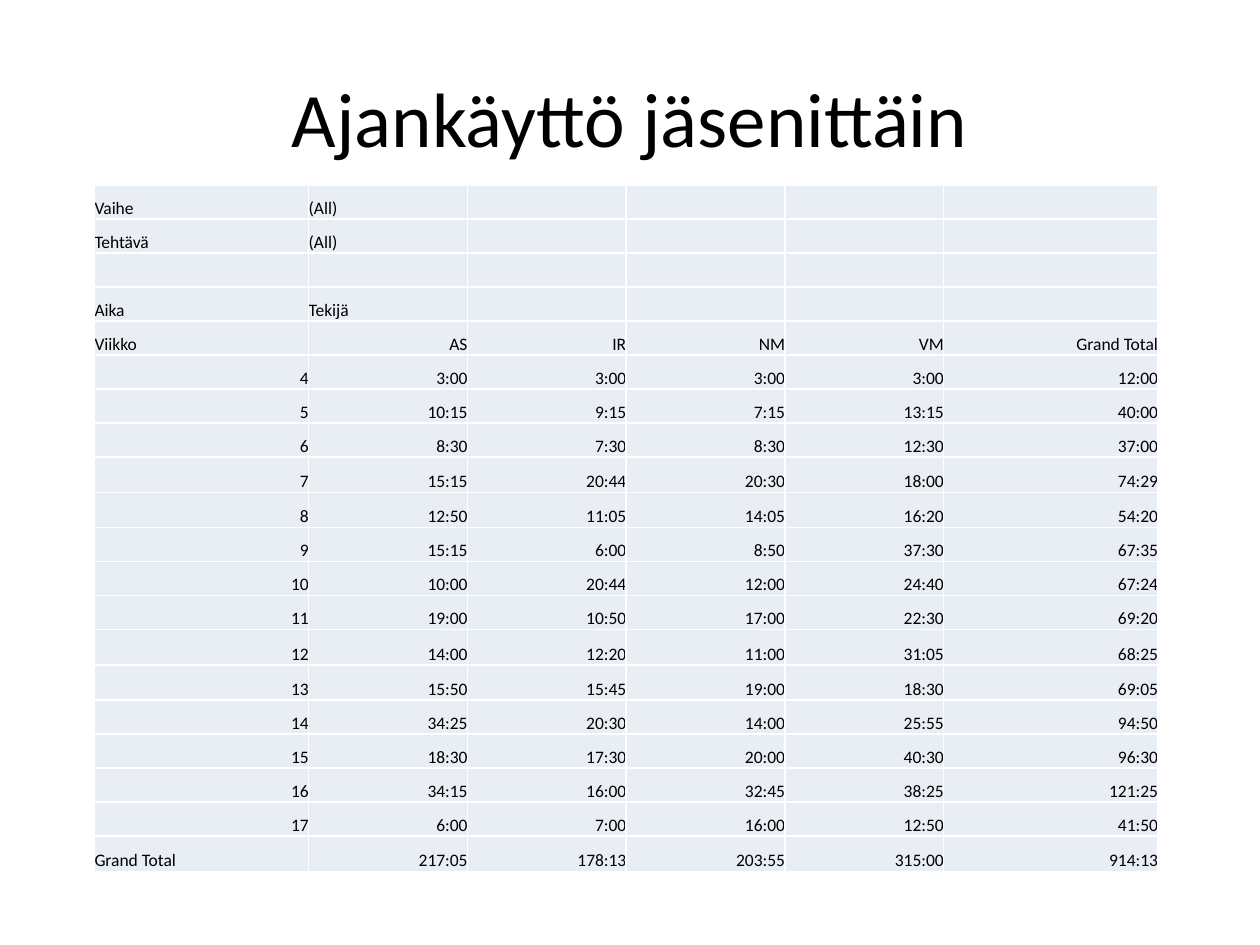
from lxml.etree import SubElement
from pptx import Presentation
from pptx.dml.color import RGBColor
from pptx.enum.text import MSO_ANCHOR as ANCHOR, PP_ALIGN as ALIGN
from pptx.oxml.ns import qn
from pptx.util import Inches, Pt

FONT = "Calibri"
COL_WIDTHS = [1.7, 1.26, 1.26, 1.26, 1.26, 1.7]
ROW_HEIGHT, TALL_HEIGHT = 0.27, 0.28
TALL_ROWS = {8, 9, 13, 14, 19}

FILTERS = [
    ["Vaihe", "(All)"],
    ["Tehtävä", "(All)"],
    [],
    ["Aika", "Tekijä"],
]
HOURS = [
    ["Viikko", "AS", "IR", "NM", "VM", "Grand Total"],
    ["4", "3:00", "3:00", "3:00", "3:00", "12:00"],
    ["5", "10:15", "9:15", "7:15", "13:15", "40:00"],
    ["6", "8:30", "7:30", "8:30", "12:30", "37:00"],
    ["7", "15:15", "20:44", "20:30", "18:00", "74:29"],
    ["8", "12:50", "11:05", "14:05", "16:20", "54:20"],
    ["9", "15:15", "6:00", "8:50", "37:30", "67:35"],
    ["10", "10:00", "20:44", "12:00", "24:40", "67:24"],
    ["11", "19:00", "10:50", "17:00", "22:30", "69:20"],
    ["12", "14:00", "12:20", "11:00", "31:05", "68:25"],
    ["13", "15:50", "15:45", "19:00", "18:30", "69:05"],
    ["14", "34:25", "20:30", "14:00", "25:55", "94:50"],
    ["15", "18:30", "17:30", "20:00", "40:30", "96:30"],
    ["16", "34:15", "16:00", "32:45", "38:25", "121:25"],
    ["17", "6:00", "7:00", "16:00", "12:50", "41:50"],
    ["Grand Total", "217:05", "178:13", "203:55", "315:00", "914:13"],
]


def color(value):
    return RGBColor.from_string(value)


def set_attrs(obj, values):
    for name, value in values.items():
        setattr(obj, name, value)


def write(p, text, size, align):
    p.alignment = align
    r = p.add_run()
    r.text = text
    set_attrs(r.font, {"size": Pt(size), "name": FONT})
    r.font.color.rgb = color("000000")


def add_title(s, text):
    sp = s.shapes.title
    set_attrs(sp, {"left": Inches(0.5), "top": Inches(0.3),
                   "width": Inches(9), "height": Inches(1.25)})
    tf = sp.text_frame
    set_attrs(tf, {"vertical_anchor": ANCHOR.MIDDLE, "word_wrap": True})
    write(tf.paragraphs[0], text, 44, ALIGN.CENTER)


def add_borders(cell, value, width):
    tc_pr = cell._tc.get_or_add_tcPr()
    for side in ("lnL", "lnR", "lnT", "lnB"):
        ln = SubElement(tc_pr, qn(f"a:{side}"), w=str(Pt(width)))
        fill = SubElement(ln, qn("a:solidFill"))
        SubElement(fill, qn("a:srgbClr"), val=value)


def format_cell(cell, text, align):
    set_attrs(cell, {"margin_left": 0, "margin_right": 0, "margin_top": 0,
                     "margin_bottom": 0, "vertical_anchor": ANCHOR.BOTTOM})
    add_borders(cell, "FFFFFF", 1)
    cell.fill.solid()
    cell.fill.fore_color.rgb = color("E9EDF4")
    p = cell.text_frame.paragraphs[0]
    if text:
        write(p, text, 10, align)
    else:
        SubElement(p._p, qn("a:endParaRPr"), sz="1000")


def add_hours_table(s, rows):
    heights = [TALL_HEIGHT if i in TALL_ROWS else ROW_HEIGHT
               for i in range(len(rows))]
    table = s.shapes.add_table(
        len(rows), len(COL_WIDTHS), Inches(0.75), Inches(1.47),
        Inches(sum(COL_WIDTHS)), Inches(sum(heights))).table
    set_attrs(table, {"first_row": False, "horz_banding": False})
    for column, width in zip(table.columns, COL_WIDTHS):
        column.width = Inches(width)
    for i, values in enumerate(rows):
        table.rows[i].height = Inches(heights[i])
        for j in range(len(COL_WIDTHS)):
            text = values[j] if j < len(values) else ""
            is_label = i < len(FILTERS) or (j == 0 and not text.isdigit())
            format_cell(table.cell(i, j), text,
                        ALIGN.LEFT if is_label else ALIGN.RIGHT)


def main():
    prs = Presentation()
    set_attrs(prs, {"slide_width": Inches(10), "slide_height": Inches(7.5)})
    s = prs.slides.add_slide(prs.slide_layouts[5])
    add_title(s, "Ajankäyttö jäsenittäin")
    add_hours_table(s, FILTERS + HOURS)
    prs.save("out.pptx")


if __name__ == "__main__":
    main()
